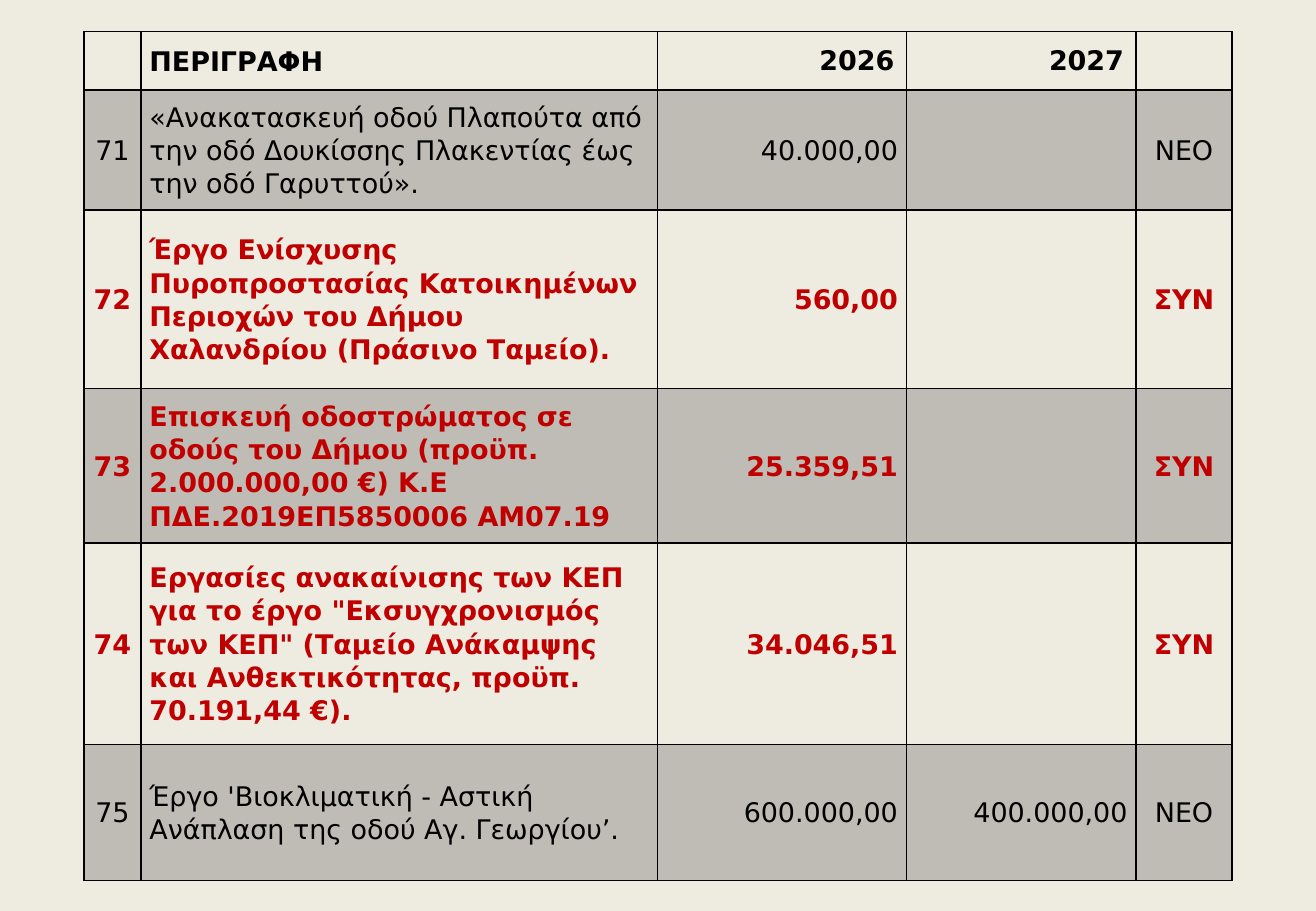
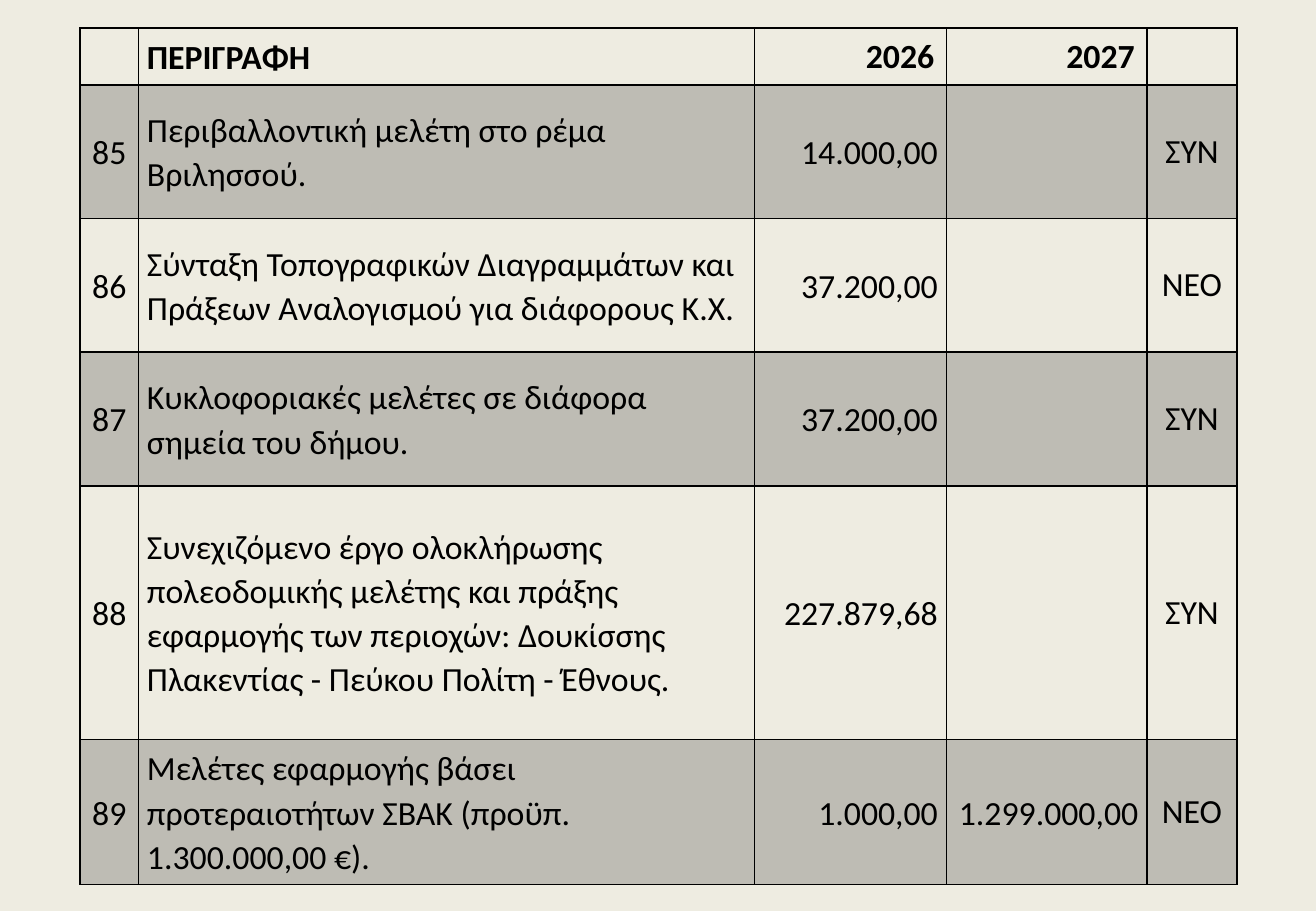
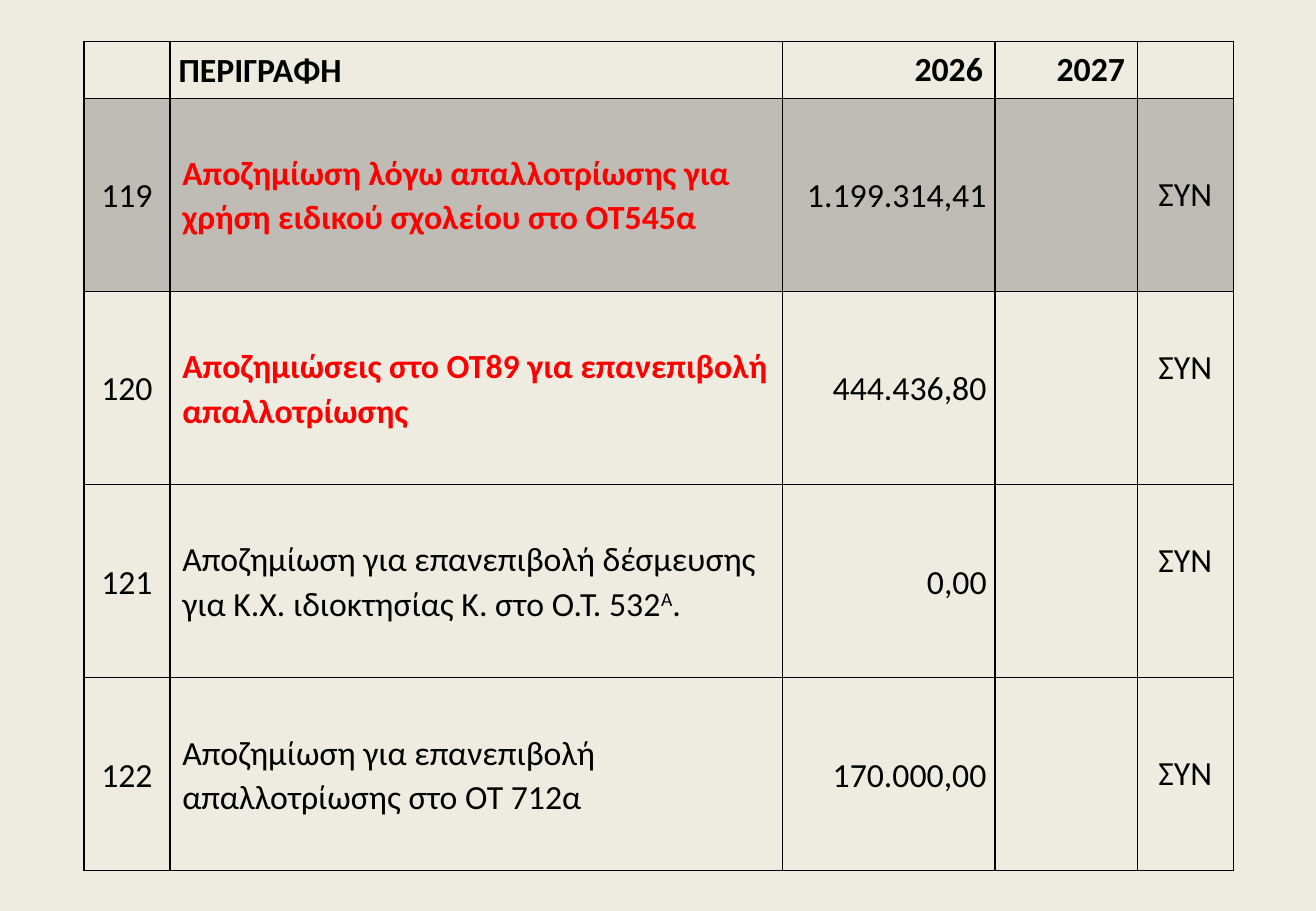
import pptx
import pptx.dml.color
import pptx.enum.text
import pptx.oxml
import pptx.oxml.ns
import pptx.util
from lxml import etree

COLORS = {"page": "EEECE1", "ink": "000000", "crimson": "C00000", "red": "FF0000"}
SHADE_ALPHA = 20000
BORDER_WIDTH = 12192
LINE_SPACING = 1.07
TIGHT, ROOMY = 0.07, 0.1
NUMBER, DESCRIPTION, FIRST_YEAR, SECOND_YEAR, STATUS = range(5)
HEADER = ("", "ΠΕΡΙΓΡΑΦΗ", "2026", "2027", "")

ALIGN = pptx.enum.text.PP_ALIGN
ALIGNMENTS = (ALIGN.CENTER, ALIGN.LEFT, ALIGN.RIGHT, ALIGN.RIGHT, ALIGN.CENTER)

# In descriptions, ^ encloses a superscript and \n is a line break.
# accents: row -> colour of its bold text, applied to accent_columns.
# raised: rows whose status sits above the middle.
TABLES = [
    {
        "left": 0.69, "top": 0.26, "font": "DejaVu Sans", "size": 16,
        "columns": [0.47, 4.25, 2.05, 1.89, 0.79],
        "rows": [0.48, 0.99, 1.47, 1.27, 1.66, 1.12],
        "shaded": {1, 3, 5}, "roomy": set(), "raised": set(),
        "accents": {2: "crimson", 3: "crimson", 4: "crimson"},
        "accent_columns": set(range(5)),
        "entries": [
            ("71", "«Ανακατασκευή οδού Πλαπούτα από την οδό Δουκίσσης "
             "Πλακεντίας έως την οδό Γαρυττού».", "40.000,00", "", "ΝΕΟ"),
            ("72", "Έργο Ενίσχυσης Πυροπροστασίας Κατοικημένων Περιοχών του "
             "Δήμου Χαλανδρίου (Πράσινο Ταμείο).", "560,00", "", "ΣΥΝ"),
            ("73", "Επισκευή οδοστρώματος σε οδούς του Δήμου (προϋπ. "
             "2.000.000,00 €) Κ.Ε ΠΔΕ.2019ΕΠ5850006 ΑΜ07.19",
             "25.359,51", "", "ΣΥΝ"),
            ("74", "Εργασίες ανακαίνισης των ΚΕΠ για το έργο "
             "\"Εκσυγχρονισμός των ΚΕΠ\" (Ταμείο Ανάκαμψης και "
             "Ανθεκτικότητας, προϋπ.\n70.191,44 €).", "34.046,51", "", "ΣΥΝ"),
            ("75", "Έργο 'Βιοκλιματική - Αστική Ανάπλαση της οδού "
             "Αγ. Γεωργίου’.", "600.000,00", "400.000,00", "ΝΕΟ"),
        ],
    },
    {
        "left": 0.66, "top": 0.23, "font": "Calibri", "size": 20,
        "columns": [0.48, 5.07, 1.58, 1.65, 0.74],
        "rows": [0.47, 1.1, 1.1, 1.1, 2.09, 1.19],
        "shaded": {1, 3, 5}, "roomy": {STATUS}, "raised": set(),
        "accents": {}, "accent_columns": set(),
        "entries": [
            ("85", "Περιβαλλοντική μελέτη στο ρέμα Βριλησσού.",
             "14.000,00", "", "ΣΥΝ"),
            ("86", "Σύνταξη Τοπογραφικών Διαγραμμάτων και Πράξεων "
             "Αναλογισμού για διάφορους Κ.Χ.", "37.200,00", "", "ΝΕΟ"),
            ("87", "Κυκλοφοριακές μελέτες σε διάφορα σημεία του δήμου.",
             "37.200,00", "", "ΣΥΝ"),
            ("88", "Συνεχιζόμενο έργο ολοκλήρωσης πολεοδομικής μελέτης και "
             "πράξης εφαρμογής των περιοχών: Δουκίσσης Πλακεντίας - Πεύκου "
             "Πολίτη - Έθνους.", "227.879,68", "", "ΣΥΝ"),
            ("89", "Μελέτες εφαρμογής βάσει προτεραιοτήτων ΣΒΑΚ (προϋπ. "
             "1.300.000,00 €).", "1.000,00", "1.299.000,00", "ΝΕΟ"),
        ],
    },
    {
        "left": 0.69, "top": 0.34, "font": "Calibri", "size": 20,
        "columns": [0.71, 5.04, 1.75, 1.17, 0.79],
        "rows": [0.47] + [1.59] * 4,
        "shaded": {1}, "roomy": {DESCRIPTION, STATUS}, "raised": {2, 3},
        "accents": {1: "red", 2: "red"}, "accent_columns": {DESCRIPTION},
        "entries": [
            ("119", "Αποζημίωση λόγω απαλλοτρίωσης για χρήση ειδικού "
             "σχολείου στο ΟΤ545α", "1.199.314,41", "", "ΣΥΝ"),
            ("120", "Αποζημιώσεις στο ΟΤ89 για επανεπιβολή απαλλοτρίωσης",
             "444.436,80", "", "ΣΥΝ"),
            ("121", "Αποζημίωση για επανεπιβολή δέσμευσης για Κ.Χ. "
             "ιδιοκτησίας Κ. στο Ο.Τ. 532^Α^.", "0,00", "", "ΣΥΝ"),
            ("122", "Αποζημίωση για επανεπιβολή απαλλοτρίωσης στο ΟΤ 712α",
             "170.000,00", "", "ΣΥΝ"),
        ],
    },
]


def paint_cell(cell, shaded):
    """Fill the cell with clear or translucent ink and rule all four sides."""
    properties = cell._tc.get_or_add_tcPr()
    if shaded:
        cell.fill.solid()
        cell.fill.fore_color.rgb = pptx.dml.color.RGBColor.from_string(COLORS["ink"])
        color = properties.find(".//" + pptx.oxml.ns.qn("a:srgbClr"))
        etree.SubElement(color, pptx.oxml.ns.qn("a:alpha"), val=str(SHADE_ALPHA))
    else:
        cell.fill.background()
    for position, side in enumerate(("lnL", "lnR", "lnT", "lnB")):
        properties.insert(position, pptx.oxml.parse_xml(
            f'<a:{side} {pptx.oxml.ns.nsdecls("a")} w="{BORDER_WIDTH}"><a:solidFill>'
            f'<a:srgbClr val="{COLORS["ink"]}"/></a:solidFill></a:{side}>'))


def write_cell(cell, text, font, size, color, bold):
    para = cell.text_frame.paragraphs[0]
    for part_index, part in enumerate(text.split("^")):
        for line_index, line in enumerate(part.split("\n")):
            if line_index:
                para.add_line_break()
            span = para.add_run()
            span.text = line
            span.font.name = font
            span.font.size = pptx.util.Pt(size)
            span.font.bold = bold
            span.font.color.rgb = pptx.dml.color.RGBColor.from_string(COLORS[color])
            if part_index % 2:
                span._r.get_or_add_rPr().set("baseline", "30000")
    return para


deck = pptx.Presentation()
deck.slide_width = pptx.util.Inches(10.83)
deck.slide_height = pptx.util.Inches(7.5)
backdrop = deck.slide_master.background.fill
backdrop.solid()
backdrop.fore_color.rgb = pptx.dml.color.RGBColor.from_string(COLORS["page"])

for plan in TABLES:
    page = deck.slides.add_slide(deck.slide_layouts[6])
    lengths = [plan["left"], plan["top"], sum(plan["columns"]), sum(plan["rows"])]
    table = page.shapes.add_table(
        len(plan["rows"]), len(plan["columns"]),
        *[pptx.util.Inches(length) for length in lengths]).table
    table.first_row = False
    table.horz_banding = False
    for column, width in zip(table.columns, plan["columns"]):
        column.width = pptx.util.Inches(width)
    for row, height in zip(table.rows, plan["rows"]):
        row.height = pptx.util.Inches(height)

    for row_index, entry in enumerate([HEADER] + plan["entries"]):
        is_header = row_index == 0
        for column_index, text in enumerate(entry):
            cell = table.cell(row_index, column_index)
            paint_cell(cell, row_index in plan["shaded"])
            if not text:
                continue
            is_year = is_header and column_index in (FIRST_YEAR, SECOND_YEAR)
            is_roomy = is_year or (not is_header and column_index in plan["roomy"])
            cell.vertical_anchor = pptx.enum.text.MSO_ANCHOR.MIDDLE
            cell.margin_left = cell.margin_right = pptx.util.Inches(
                ROOMY if is_roomy else TIGHT)
            if column_index == STATUS and row_index in plan["raised"]:
                cell.margin_bottom = pptx.util.Inches(0.38)
            accented = row_index in plan["accents"] and column_index in plan["accent_columns"]
            para = write_cell(
                cell, text, plan["font"], plan["size"],
                plan["accents"][row_index] if accented else "ink",
                is_header or accented)
            para.alignment = ALIGNMENTS[column_index]
            if not is_roomy or column_index == DESCRIPTION:
                para.line_spacing = LINE_SPACING

deck.save("out.pptx")
